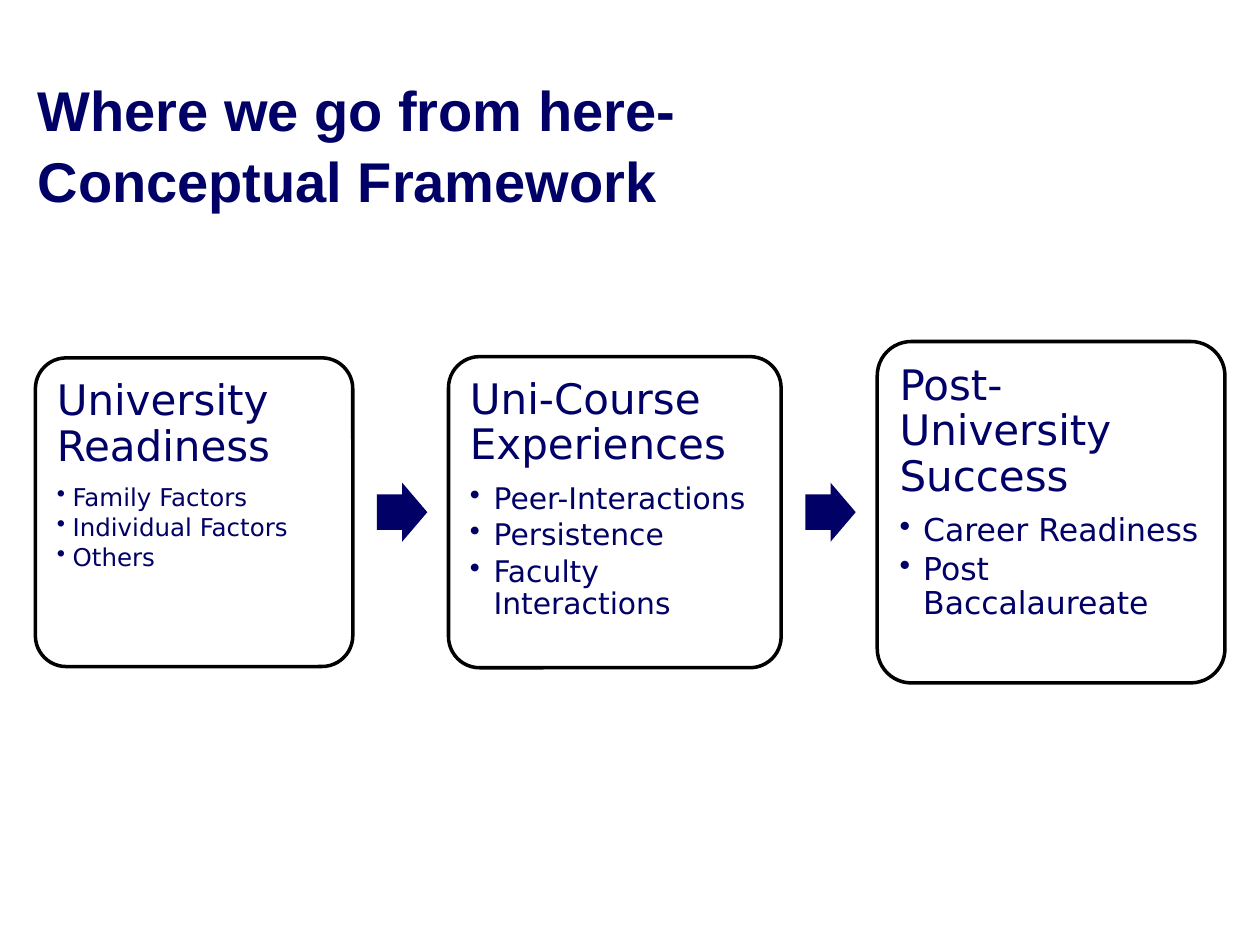
import pptx
import pptx.util
import pptx.dml.color
import pptx.enum.shapes
import pptx.enum.text
import lxml.etree
import pptx.oxml.ns

Pt = pptx.util.Pt
Kind = pptx.enum.shapes.MSO_SHAPE
COLORS = {"navy": "000066", "black": "000000", "white": "FFFFFF"}
HEAD = 24
MID = 292.7
ARROW = (28.8, 33.8)
GAP = 13.8

# left, width, height, heading, item size, item indent, items
STAGES = [
    (20.2, 181.4, 176.4, "University Readiness", 14, 9,
     ["Family Factors", "Individual Factors", "Others"]),
    (256.3, 190.1, 177.8, "Uni-Course Experiences", 17, 13.5,
     ["Peer-Interactions", "Persistence", "Faculty Interactions"]),
    (501.3, 198.7, 195.1, "Post-University Success", 18, 13.5,
     ["Career Readiness", "Post Baccalaureate"]),
]


def color(name):
    return pptx.dml.color.RGBColor.from_string(COLORS[name])


def assign(target, values):
    for name, value in values.items():
        setattr(target, name, value)


class Deck:
    def __init__(self, slide):
        self.slide = slide
        self.frame = {
            "word_wrap": True,
            "vertical_anchor": pptx.enum.text.MSO_ANCHOR.TOP,
            "margin_left": Pt(7.2), "margin_right": Pt(7.2),
        }

    def label(self, para, text, size, font, bold=False, **style):
        para.text = text
        assign(para, {"alignment": pptx.enum.text.PP_ALIGN.LEFT, **style})
        face = para.runs[0].font
        assign(face, {"name": font, "size": Pt(size), "bold": bold})
        face.color.rgb = color("navy")

    def title(self, text, left, top, width, height):
        box = self.slide.shapes.add_textbox(
            Pt(left), Pt(top), Pt(width), Pt(height))
        assign(box.text_frame, self.frame)
        self.label(box.text_frame.paragraphs[0], text, 32, "Arial", True,
                   line_spacing=1.06)

    def shape(self, kind, left, width, height, fill, adjust):
        """Add a preset shape centred on the row of stages."""
        shape = self.slide.shapes.add_shape(
            kind, Pt(left), Pt(MID - height / 2), Pt(width), Pt(height))
        shape.shadow.inherit = False
        shape.fill.solid()
        shape.fill.fore_color.rgb = color(fill)
        for i, value in enumerate(adjust):
            shape.adjustments[i] = value
        return shape

    def arrow(self, left):
        shape = self.shape(Kind.RIGHT_ARROW, left, *ARROW, "navy", [0.6, 0.5])
        shape.line.fill.background()

    def bullet(self, para, indent):
        props = para._p.get_or_add_pPr()
        props.set("marL", str(Pt(indent)))
        props.set("indent", str(-Pt(indent)))
        mark = lxml.etree.SubElement(props, pptx.oxml.ns.qn("a:buChar"))
        mark.set("char", "•")

    def stage(self, left, width, height, head, size, indent, items):
        card = self.shape(Kind.ROUNDED_RECTANGLE, left, width, height,
                          "white", [0.1])
        card.line.color.rgb = color("black")
        card.line.width = Pt(2)
        frame = card.text_frame
        assign(frame, {**self.frame, "margin_top": Pt(7.2),
                       "margin_bottom": Pt(7.2)})
        self.label(frame.paragraphs[0], head, HEAD, "DejaVu Sans",
                   line_spacing=0.9, space_after=Pt(0.35 * HEAD))
        for item in items:
            para = frame.add_paragraph()
            self.bullet(para, indent)
            self.label(para, item, size, "DejaVu Sans", level=1,
                       line_spacing=0.9, space_after=Pt(0.15 * size))


def main():
    show = pptx.Presentation()
    assign(show, {"slide_width": Pt(720), "slide_height": Pt(540)})
    deck = Deck(show.slides.add_slide(show.slide_layouts[6]))
    deck.title("Where we go from here- Conceptual Framework",
               14.4, 37.4, 538.6, 113)
    for i, stage in enumerate(STAGES):
        if i:
            left, width = STAGES[i - 1][:2]
            deck.arrow(left + width + GAP)
        deck.stage(*stage)
    show.save("out.pptx")


if __name__ == "__main__":
    main()
